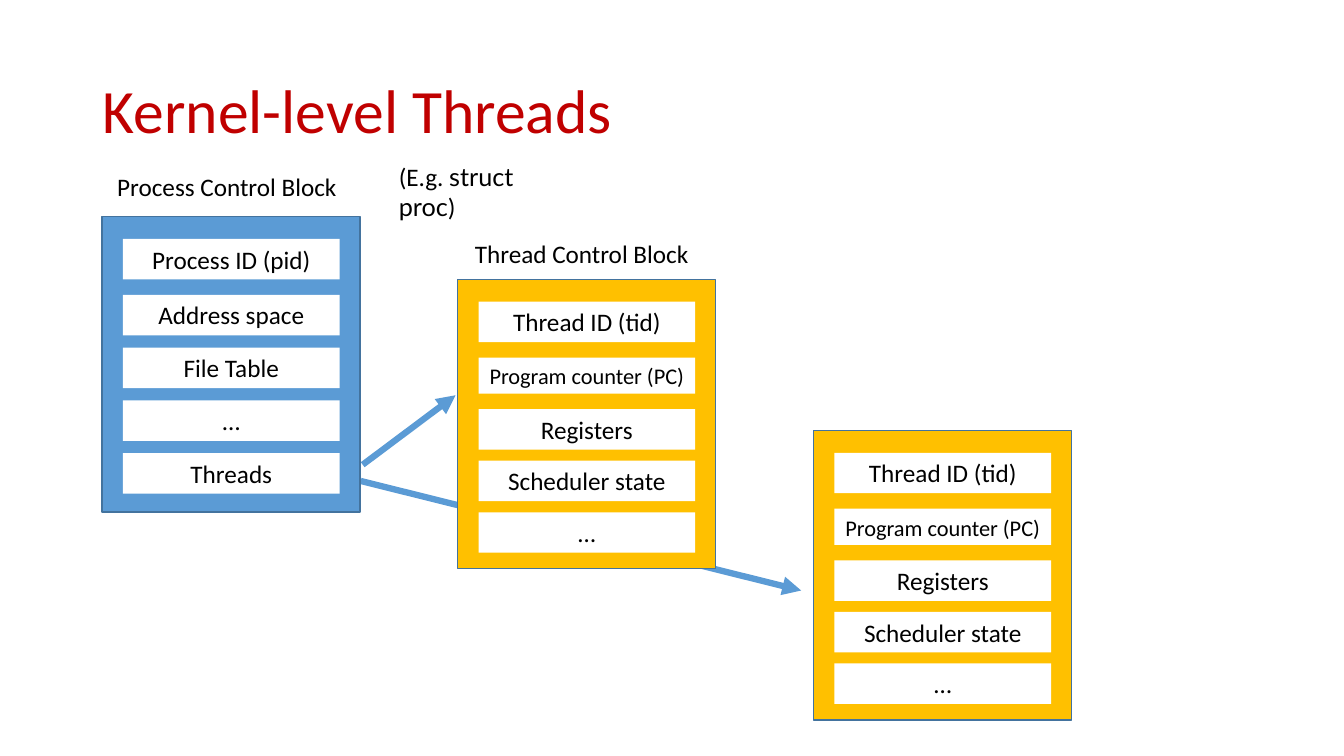
from lxml.etree import SubElement
from pptx import Presentation
from pptx.dml.color import RGBColor
from pptx.enum.shapes import MSO_CONNECTOR, MSO_SHAPE
from pptx.enum.text import MSO_ANCHOR, MSO_AUTO_SIZE, PP_ALIGN
from pptx.oxml.ns import qn
from pptx.util import Cm, Pt

HUES = {
    "title": "C00000",
    "text": "000000",
    "blue": "5B9BD5",
    "gold": "FFC000",
    "edge": "43739E",
    "white": "FFFFFF",
}
PROCESS = ["Process ID (pid)", "Address space", "File Table", "…", "Threads"]
THREAD = ["Thread ID (tid)", "Program counter (PC)", "Registers", "Scheduler state", "…"]
SMALL = "Program counter (PC)"


class Canvas:
    font = "Calibri"
    size = 18

    def __init__(self, deck):
        self.slide = deck.slides.add_slide(deck.slide_layouts[5])
        self.shapes = self.slide.shapes

    def hue(self, name):
        return RGBColor.from_string(HUES[name])

    def style(self, run, size=None, hue="text", font=None):
        run.font.name = font or self.font
        run.font.size = Pt(size or self.size)
        run.font.color.rgb = self.hue(hue)

    def title(self, text, left, top, width, height):
        box = self.shapes.title
        box.left, box.top, box.width, box.height = map(Cm, (left, top, width, height))
        frame = box.text_frame
        frame.text = text
        frame.vertical_anchor = MSO_ANCHOR.MIDDLE
        para = frame.paragraphs[0]
        para.alignment = PP_ALIGN.LEFT
        para.line_spacing = 0.9
        self.style(para.runs[0], 44, "title")

    def label(self, parts, left, top, width, align=PP_ALIGN.CENTER):
        box = self.shapes.add_textbox(Cm(left), Cm(top), Cm(width), Cm(1.02))
        frame = box.text_frame
        frame.word_wrap = True
        frame.auto_size = MSO_AUTO_SIZE.SHAPE_TO_FIT_TEXT
        para = frame.paragraphs[0]
        para.alignment = align
        for text, font in parts:
            run = para.add_run()
            run.text = text
            self.style(run, font=font)

    def rect(self, group, left, top, width, height, fill, edge=None):
        box = group.shapes.add_shape(
            MSO_SHAPE.RECTANGLE, Cm(left), Cm(top), Cm(width), Cm(height))
        box.shadow.inherit = False
        box.fill.solid()
        box.fill.fore_color.rgb = self.hue(fill)
        if edge:
            box.line.color.rgb = self.hue(edge)
            box.line.width = Pt(1)
        else:
            box.line.fill.background()
        return box

    def block(self, rows, left, top, height, step, fill):
        group = self.shapes.add_group_shape()
        self.rect(group, left, top, 6.5, height, fill, "edge")
        for i, text in enumerate(rows):
            drop = 1.97 + (i - 1) * step if i else 0.56
            small = text == SMALL
            cell = self.rect(group, left + 0.53, top + drop, 5.46,
                             0.91 if small else 1.02, "white")
            frame = cell.text_frame
            frame.text = text
            frame.word_wrap = True
            frame.auto_size = MSO_AUTO_SIZE.SHAPE_TO_FIT_TEXT
            frame.vertical_anchor = MSO_ANCHOR.TOP
            para = frame.paragraphs[0]
            para.alignment = PP_ALIGN.CENTER
            self.style(para.runs[0], 16 if small else None)

    def arrow(self, *ends):
        line = self.shapes.add_connector(MSO_CONNECTOR.STRAIGHT, *map(Cm, ends))
        line.line.color.rgb = self.hue("blue")
        line.line.width = Pt(4.5)
        SubElement(line.line._get_or_add_ln(), qn("a:tailEnd"), type="triangle")
        SubElement(line._element.spPr, qn("a:effectLst"))


def main():
    deck = Presentation()
    deck.slide_width, deck.slide_height = Cm(33.87), Cm(19.05)
    page = Canvas(deck)
    page.arrow(9.09, 12.12, 20.19, 14.88)
    page.title("Kernel-level Threads", 2.34, 1.02, 29.21, 3.68)
    page.label([("Process Control Block", None)], 2.34, 4.19, 6.76)
    page.label([("(E.g. ", None), ("struct proc", "Lato"), (")", None)],
               9.8, 3.94, 4.95, PP_ALIGN.LEFT)
    page.block(PROCESS, 2.57, 5.46, 7.44, 1.33, "blue")
    page.label([("Thread Control Block", None)], 11.28, 5.89, 6.76)
    for left, top in [(11.53, 7.04), (20.5, 10.85)]:
        page.block(THREAD, left, top, 7.29, 1.3, "gold")
    page.arrow(9.14, 11.71, 11.48, 9.96)
    deck.save("out.pptx")


if __name__ == "__main__":
    main()
